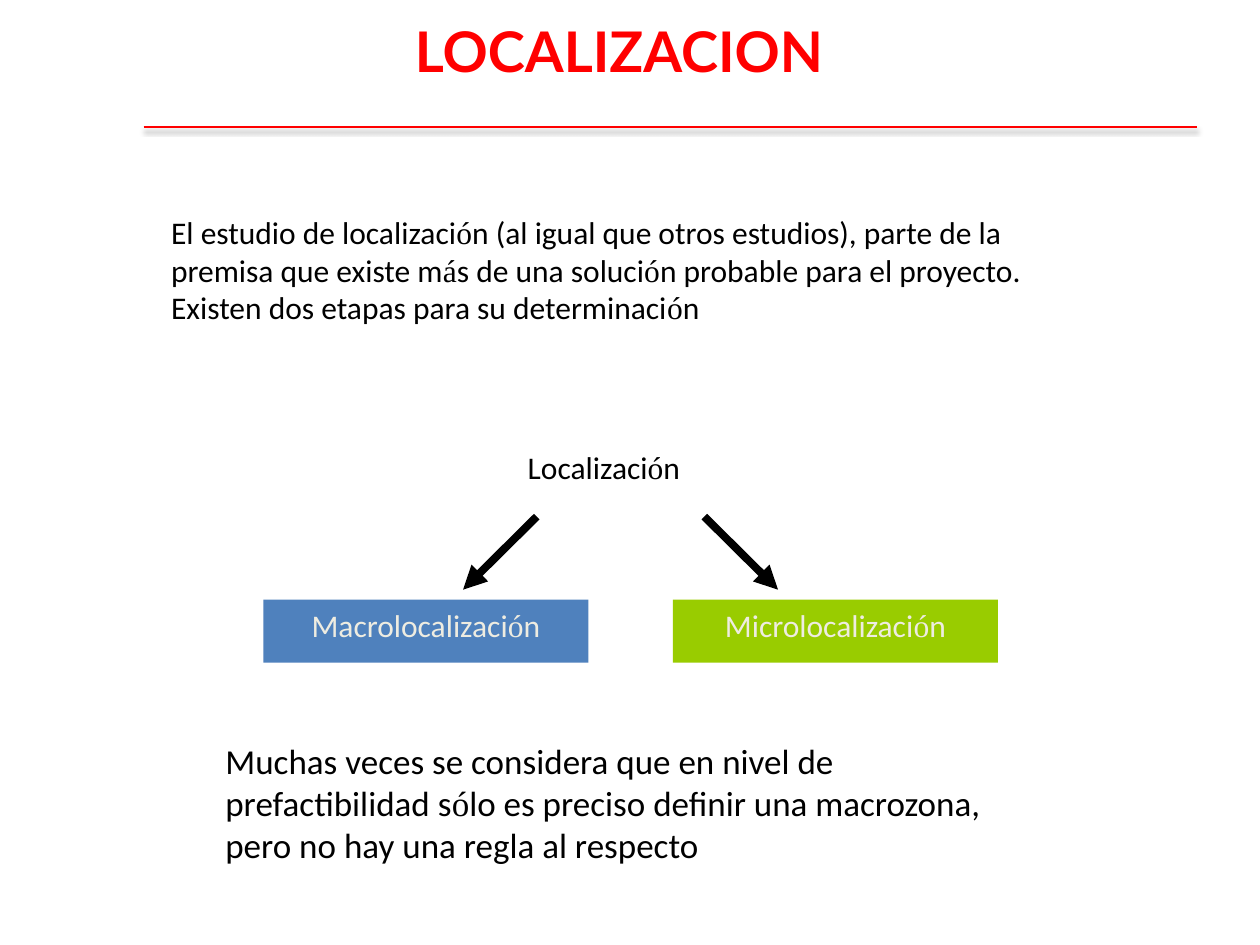
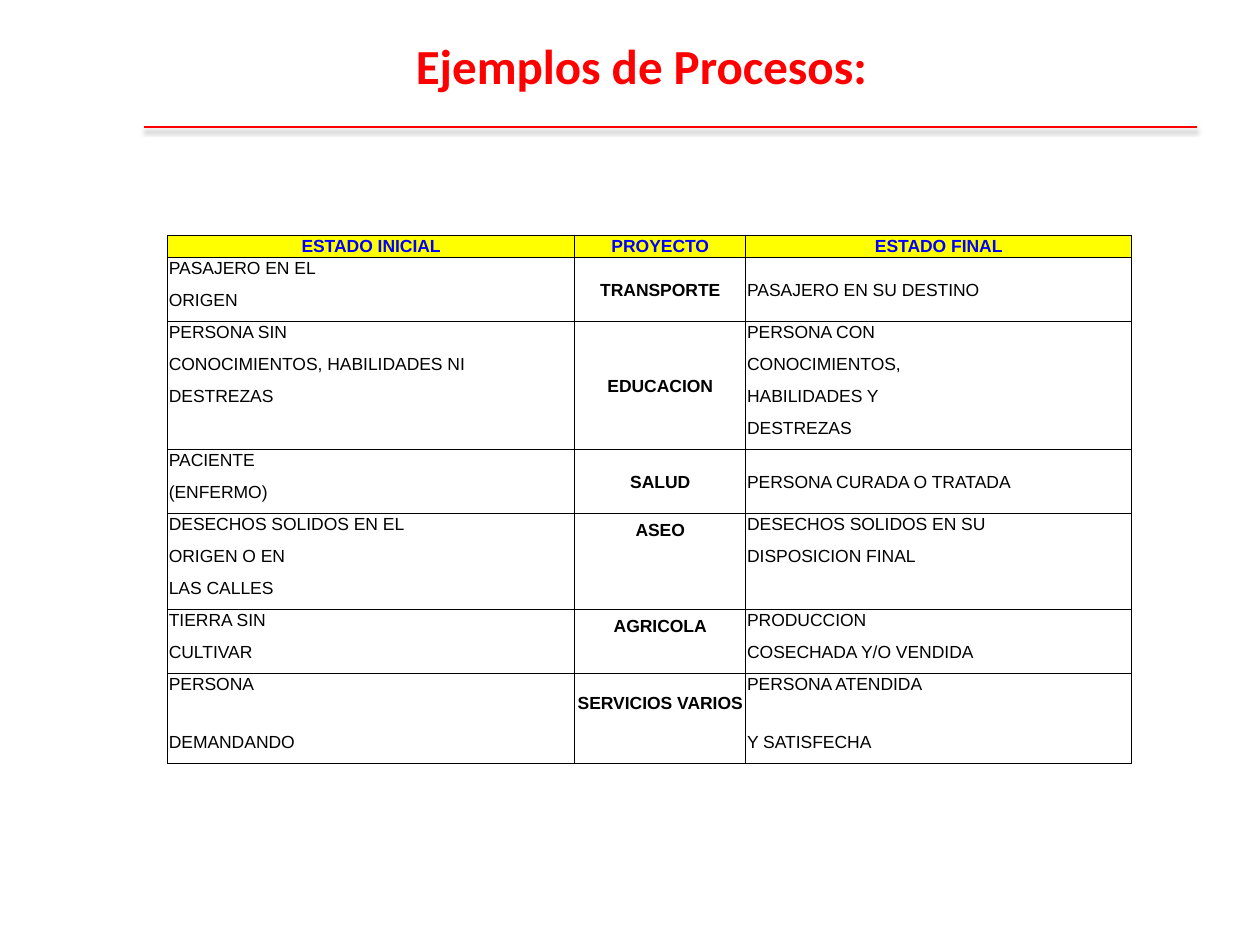
from dataclasses import dataclass
from itertools import groupby

from lxml.etree import SubElement
from pptx import Presentation
from pptx.dml.color import RGBColor
from pptx.enum.shapes import MSO_CONNECTOR, MSO_SHAPE
from pptx.enum.text import MSO_ANCHOR, PP_ALIGN
from pptx.oxml.ns import qn
from pptx.util import Inches, Pt

SLIDE_WIDTH, SLIDE_HEIGHT = Inches(10), Inches(7.5)
COLUMN, ROW = SLIDE_WIDTH / 100, SLIDE_HEIGHT / 75

RED, BLACK, CREAM = "FF0000", "000000", "EEECE1"
BLUE, GREEN = "4F81BD", "99CC00"
YELLOW, HEADING_BLUE = "FFFF00", "0000FF"
BODY_FONT, ACCENT_FONT, TABLE_FONT = "Calibri", "Times New Roman", "Arial"

TABLE_WIDTHS = (32.3, 13.6, 30.6)
HEADINGS = ("ESTADO INICIAL", "PROYECTO", "ESTADO FINAL")
HEADING_HEIGHT, LINE_HEIGHT, TALL_LINE_HEIGHT = 1.75, 2.54, 4.6
PROCESSES = [
    (["PASAJERO EN EL", "ORIGEN"], "TRANSPORTE", ["PASAJERO EN SU DESTINO"]),
    (["PERSONA SIN", "CONOCIMIENTOS, HABILIDADES NI", "DESTREZAS", ""], "EDUCACION",
     ["PERSONA CON", "CONOCIMIENTOS,", "HABILIDADES Y", "DESTREZAS"]),
    (["PACIENTE", "(ENFERMO)"], "SALUD", ["PERSONA CURADA O TRATADA"]),
    (["DESECHOS SOLIDOS EN EL", "ORIGEN O EN", "LAS CALLES"], "ASEO",
     ["DESECHOS SOLIDOS EN SU", "DISPOSICION FINAL", ""]),
    (["TIERRA SIN", "CULTIVAR"], "AGRICOLA", ["PRODUCCION", "COSECHADA Y/O VENDIDA"]),
    (["PERSONA", "DEMANDANDO"], "SERVICIOS VARIOS", ["PERSONA ATENDIDA", "Y SATISFECHA"]),
]
CENTRED_PROJECTS = {"TRANSPORTE", "EDUCACION", "SALUD"}


@dataclass
class Box:
    column: float
    row: float
    columns: float
    rows: float

    def area(self, column, row, columns, rows):
        return Box(self.column + column, self.row + row, columns, rows)

    def point(self, column, row):
        return int((self.column + column) * COLUMN), int((self.row + row) * ROW)

    def frame(self):
        return *self.point(0, 0), int(self.columns * COLUMN), int(self.rows * ROW)


PAGE = Box(0, 0, 100, 75)


def color(hex_code):
    return RGBColor.from_string(hex_code)


def add_run(paragraph, text, size, font, hex_code, bold=False):
    run = paragraph.add_run()
    run.text = text
    run.font.size = Pt(size)
    run.font.name = font
    run.font.bold = bold
    run.font.color.rgb = color(hex_code)


def write_accented(paragraph, text, size, hex_code):
    for accented, letters in groupby(text, lambda letter: letter in "óá"):
        font = ACCENT_FONT if accented else BODY_FONT
        add_run(paragraph, "".join(letters), size, font, hex_code)


def place_title(slide, box, text, size, font, align, anchor):
    title = slide.shapes.title
    title.left, title.top, title.width, title.height = box.frame()
    title.text_frame.vertical_anchor = anchor
    paragraph = title.text_frame.paragraphs[0]
    paragraph.alignment = align
    add_run(paragraph, text, size, font, RED, bold=True)


def place_text(slide, box, text, size):
    passage = slide.shapes.add_textbox(*box.frame())
    passage.text_frame.word_wrap = True
    write_accented(passage.text_frame.paragraphs[0], text, size, BLACK)


def place_stage(slide, box, text, fill):
    stage = slide.shapes.add_shape(MSO_SHAPE.RECTANGLE, *box.frame())
    stage.shadow.inherit = False
    stage.fill.solid()
    stage.fill.fore_color.rgb = color(fill)
    stage.line.fill.background()
    stage.text_frame.word_wrap = True
    stage.text_frame.vertical_anchor = MSO_ANCHOR.TOP
    paragraph = stage.text_frame.paragraphs[0]
    paragraph.alignment = PP_ALIGN.CENTER
    write_accented(paragraph, text, 18, CREAM)


def draw_line(slide, start, end, hex_code, width):
    line = slide.shapes.add_connector(MSO_CONNECTOR.STRAIGHT, *start, *end)
    line.line.color.rgb = color(hex_code)
    line.line.width = Pt(width)
    effects = SubElement(line._element.spPr, qn("a:effectLst"))
    return line, effects


def draw_arrow(slide, start, end):
    arrow, _ = draw_line(slide, start, end, BLACK, 4.5)
    SubElement(arrow._element.spPr.find(qn("a:ln")), qn("a:tailEnd"), type="triangle")


def add_title_rule(slide):
    rule, effects = draw_line(slide, PAGE.point(11.4, 10.1), PAGE.point(95, 10.1), RED, 1)
    shadow = SubElement(effects, qn("a:outerShdw"), blurRad=str(Pt(3.1)), dist=str(Pt(1.6)),
                        dir="5400000", rotWithShape="0")
    tint = SubElement(shadow, qn("a:srgbClr"), val=BLACK)
    SubElement(tint, qn("a:alpha"), val="38000")
    slide.slide_layout.shapes.element.append(rule._element)


def draw_stages(slide, box):
    place_text(slide, box.area(20, 0, 20, 5), "Localización", 18)
    stages = (("Macrolocalización", BLUE, -1), ("Microlocalización", GREEN, 1))
    middle, stage_width, gap = box.columns / 2, 25.8, 6.7
    for text, fill, side in stages:
        centre = middle + side * (stage_width + gap) / 2
        stage_box = box.area(centre - stage_width / 2, 12.5, stage_width, 5)
        place_stage(slide, stage_box, text, fill)
        draw_arrow(slide, box.point(middle + side * 6.65 - 0.8, 5.9),
                   box.point(middle + side * 12.5 - 0.8, 11.7))


def border_cell(cell, top, bottom):
    properties = cell._tc.get_or_add_tcPr()
    for tag, shown in (("lnL", True), ("lnR", True), ("lnT", top), ("lnB", bottom)):
        edge = SubElement(properties, qn("a:" + tag), w=str(Pt(0.5)))
        if shown:
            SubElement(SubElement(edge, qn("a:solidFill")), qn("a:srgbClr"), val=BLACK)
        else:
            SubElement(edge, qn("a:noFill"))


def fill_cell(cell, text, top=True, bottom=True, fill=None, hex_code=BLACK,
              bold=False, centred=False, anchor=MSO_ANCHOR.TOP):
    cell.margin_left = cell.margin_right = cell.margin_top = Inches(0.01)
    cell.margin_bottom = 0
    cell.vertical_anchor = anchor
    border_cell(cell, top, bottom)
    if fill:
        cell.fill.solid()
        cell.fill.fore_color.rgb = color(fill)
    else:
        cell.fill.background()
    paragraph = cell.text_frame.paragraphs[0]
    if centred:
        paragraph.alignment = PP_ALIGN.CENTER
    if text:
        add_run(paragraph, text, 10, TABLE_FONT, hex_code, bold)
    else:
        SubElement(paragraph._p, qn("a:endParaRPr"), sz="1000")


def fill_state(table, first, column, lines, count, merged, **style):
    last = first + count - 1
    if merged:
        table.cell(first, column).merge(table.cell(last, column))
        style["anchor"] = MSO_ANCHOR.MIDDLE
    for offset in range(count):
        text = lines[offset] if offset < len(lines) else ""
        whole = merged and offset == 0
        fill_cell(table.cell(first + offset, column), text, top=offset == 0,
                  bottom=whole or offset == count - 1, **style)


def draw_processes(slide, box):
    row_count = 1 + sum(len(initial) for initial, _, _ in PROCESSES)
    table = slide.shapes.add_table(row_count, len(HEADINGS), *box.frame()).table
    table.first_row = table.horz_banding = False
    for column, width in zip(table.columns, TABLE_WIDTHS):
        column.width = int(width * COLUMN)
    for row in table.rows:
        row.height = int(LINE_HEIGHT * ROW)
    table.rows[0].height = int(HEADING_HEIGHT * ROW)
    table.rows[row_count - 2].height = int(TALL_LINE_HEIGHT * ROW)
    for column, heading in enumerate(HEADINGS):
        fill_cell(table.cell(0, column), heading, fill=YELLOW, hex_code=HEADING_BLUE,
                  bold=True, centred=True)
    first = 1
    for initial, project, final in PROCESSES:
        count = len(initial)
        fill_state(table, first, 0, initial, count, False)
        fill_state(table, first, 1, [project], count, project in CENTRED_PROJECTS,
                   bold=True, centred=True, anchor=MSO_ANCHOR.MIDDLE)
        fill_state(table, first, 2, final, count, len(final) == 1)
        first += count


def build_location_slide(slide, page):
    place_title(slide, page.area(0.8, -2.3, 96.7, 12.5), "LOCALIZACION", 32, "Lato",
                PP_ALIGN.CENTER, MSO_ANCHOR.MIDDLE)
    place_text(slide, page.area(12.6, 16.4, 70, 17),
               "El estudio de localización (al igual que otros estudios), parte de la premisa "
               "que existe más de una solución probable para el proyecto. "
               "Existen dos etapas para su determinación", 18)
    draw_stages(slide, page.area(20.9, 35.1, 58.3, 17.5))
    place_text(slide, page.area(16.9, 58.2, 66.2, 11),
               "Muchas veces se considera que en nivel de prefactibilidad sólo es preciso "
               "definir una macrozona, pero no hay una regla al respecto", 20)


def build_process_slide(slide, page):
    place_title(slide, page.area(32, 2.3, 50, 5.7), "Ejemplos de Procesos:", 28, BODY_FONT,
                PP_ALIGN.LEFT, MSO_ANCHOR.TOP)
    draw_processes(slide, page.area(13.3, 18.7, sum(TABLE_WIDTHS), 41.8))


def main():
    presentation = Presentation()
    presentation.slide_width, presentation.slide_height = SLIDE_WIDTH, SLIDE_HEIGHT
    title_only = presentation.slide_layouts[5]
    location_slide = presentation.slides.add_slide(title_only)
    add_title_rule(location_slide)
    build_location_slide(location_slide, PAGE)
    build_process_slide(presentation.slides.add_slide(title_only), PAGE)
    presentation.save("out.pptx")


if __name__ == "__main__":
    main()
